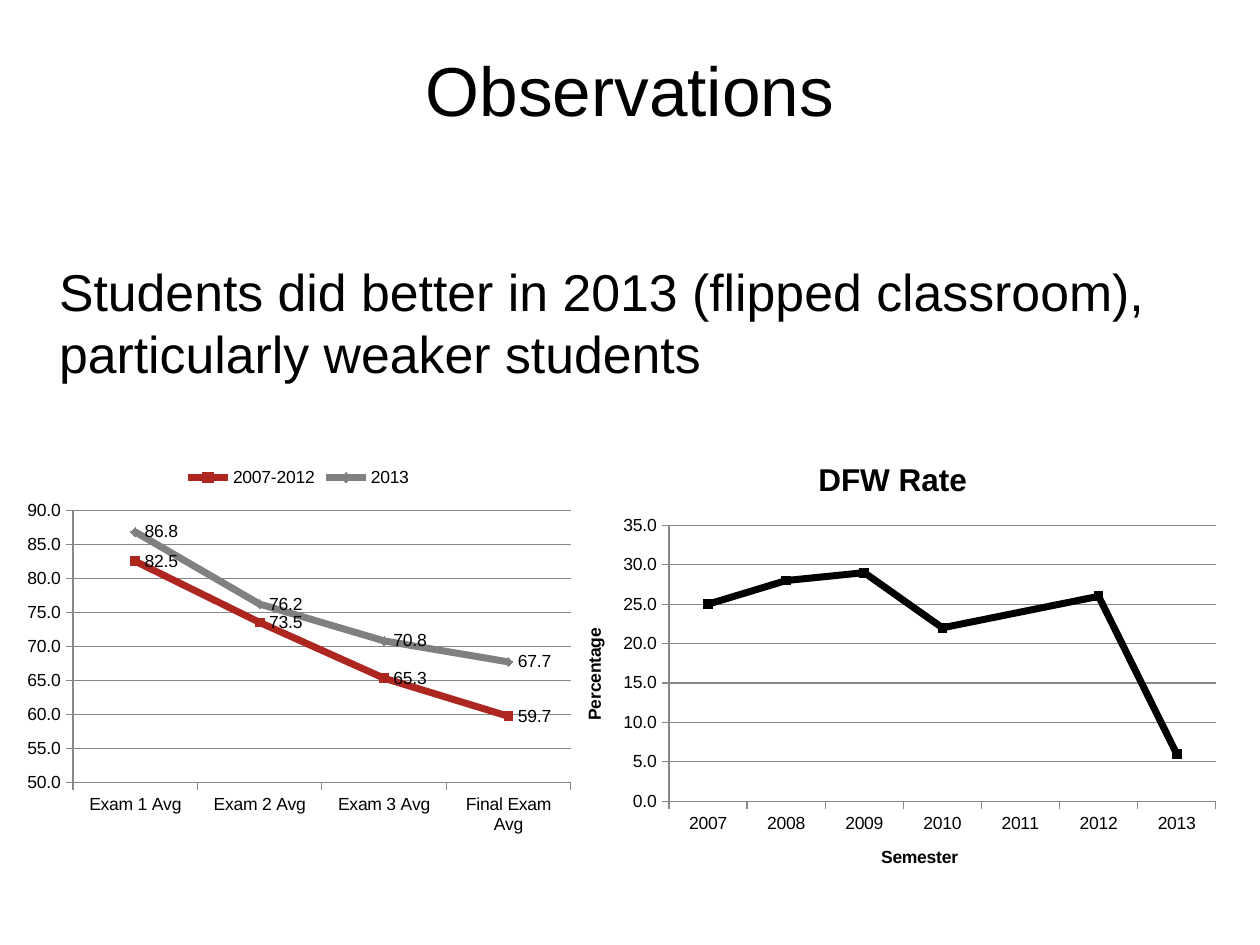
from dataclasses import dataclass

from lxml import etree
from pptx import Presentation
from pptx.chart.data import CategoryChartData
from pptx.dml.color import RGBColor
from pptx.enum.chart import (XL_CHART_TYPE, XL_LABEL_POSITION,
                             XL_LEGEND_POSITION, XL_MARKER_STYLE, XL_TICK_MARK)
from pptx.enum.text import MSO_ANCHOR, PP_ALIGN
from pptx.oxml.ns import qn
from pptx.util import Inches, Pt

LINE = XL_CHART_TYPE.LINE_MARKERS
RIGHT = XL_LABEL_POSITION.RIGHT
TOP = XL_LEGEND_POSITION.TOP
SQUARE, DIAMOND = XL_MARKER_STYLE.SQUARE, XL_MARKER_STYLE.DIAMOND
OUT = XL_TICK_MARK.OUTSIDE
MIDDLE, START = MSO_ANCHOR.MIDDLE, MSO_ANCHOR.TOP
CENTER, LEFT = PP_ALIGN.CENTER, PP_ALIGN.LEFT


@dataclass(frozen=True)
class Theme:
    face: str = "Arial"
    ink: RGBColor = RGBColor(0, 0, 0)
    red: RGBColor = RGBColor(0xAD, 0x26, 0x20)
    gray: RGBColor = RGBColor(0x80, 0x80, 0x80)
    rule: RGBColor = RGBColor(0x87, 0x87, 0x87)
    title: float = 39.6
    body: float = 29.6
    head: float = 18
    label: float = 10


THEME = Theme()


def style(font, size, bold=False):
    font.name, font.size, font.bold = THEME.face, Pt(size), bold
    font.color.rgb = THEME.ink


def add_text(slide, box, text, size, align=LEFT, anchor=START):
    frame = slide.shapes.add_textbox(*map(Inches, box)).text_frame
    frame.word_wrap = True
    frame.vertical_anchor = anchor
    para = frame.paragraphs[0]
    para.text, para.alignment = text, align
    style(para.font, size)


def set_title(owner, text, size):
    """Give a chart or an axis a bold title."""
    frame = (owner.chart_title if hasattr(owner, "chart_title")
             else owner.axis_title).text_frame
    frame.text = text
    style(frame.paragraphs[0].font, size, True)


def set_plot(chart, box, area):
    """Fix the inner plot area, given in inches within the chart's box."""
    plot = chart._chartSpace.chart.plotArea
    for old in plot.findall(qn("c:layout")):
        plot.remove(old)
    layout = etree.Element(qn("c:layout"))
    manual = etree.SubElement(layout, qn("c:manualLayout"))
    shares = [part / whole for part, whole in zip(area, box[2:] * 2)]
    parts = [("layoutTarget", "inner"), ("xMode", "edge"), ("yMode", "edge"),
             *zip("xywh", shares)]
    for name, value in parts:
        etree.SubElement(manual, qn(f"c:{name}")).set("val", str(value))
    plot.insert(0, layout)


def add_lines(slide, box, cats, rows, scale, area):
    """Add a line chart; rows hold name, values, colour and marker."""
    data = CategoryChartData(number_format="0.0")
    data.categories = cats
    for name, values, _, _ in rows:
        data.add_series(name, values)
    chart = slide.shapes.add_chart(LINE, *map(Inches, box), data).chart
    style(chart.font, THEME.label)
    chart.has_title = chart.has_legend = False
    set_plot(chart, box, area)

    for series, (_, _, color, mark) in zip(chart.plots[0].series, rows):
        series.smooth = False
        series.format.line.width = Pt(4)
        series.format.line.color.rgb = color
        series.marker.style, series.marker.size = mark, 5
        look = series.marker.format
        look.fill.solid()
        look.fill.fore_color.rgb = look.line.color.rgb = color

    axis = chart.value_axis
    axis.minimum_scale, axis.maximum_scale, axis.major_unit = scale
    axis.tick_labels.number_format = "0.0"
    axis.tick_labels.number_format_is_linked = False
    axis.has_major_gridlines = True
    for line in (axis.major_gridlines.format.line, axis.format.line,
                 chart.category_axis.format.line):
        line.color.rgb, line.width = THEME.rule, Pt(0.75)
    for each in (axis, chart.category_axis):
        each.major_tick_mark = OUT
    return chart


def add_exams(slide, box):
    cats = ["Exam 1 Avg", "Exam 2 Avg", "Exam 3 Avg", "Final Exam Avg"]
    rows = [("2007-2012", (82.5, 73.5, 65.3, 59.7), THEME.red, SQUARE),
            ("2013", (86.8, 76.2, 70.8, 67.7), THEME.gray, DIAMOND)]
    chart = add_lines(slide, box, cats, rows, (50, 90, 5),
                      (0.46, 0.45, 3.95, 2.16))
    chart.has_legend = True
    chart.legend.position = TOP
    chart.legend.include_in_layout = False
    style(chart.legend.font, THEME.label)
    for series in chart.plots[0].series:
        labels = series.data_labels
        labels.show_value, labels.position = True, RIGHT
        labels.number_format, labels.number_format_is_linked = "0.0", False
        style(labels.font, THEME.label)


def add_rate(slide, box):
    cats = [str(year) for year in range(2007, 2014)]
    rows = [("Series 1", (25, 28, 29, 22, None, 26, 6), THEME.ink, SQUARE)]
    chart = add_lines(slide, box, cats, rows, (0, 35, 5),
                      (0.89, 0.7, 4.34, 2.19))
    set_title(chart, "DFW Rate", THEME.head)
    set_title(chart.category_axis, "Semester", THEME.label)
    set_title(chart.value_axis, "Percentage", THEME.label)
    root = chart._chartSpace.chart
    root.find(qn("c:dispBlanksAs")).set("val", "span")


def main():
    deck = Presentation()
    deck.slide_width, deck.slide_height = Inches(10), Inches(7.5)
    slide = deck.slides.add_slide(deck.slide_layouts[6])
    add_text(slide, (0.5, 0.3, 9, 0.81), "Observations", THEME.title,
             CENTER, MIDDLE)
    add_text(slide, (0.37, 2.01, 9.38, 0.97),
             "Students did better in 2013 (flipped classroom), "
             "particularly weaker students", THEME.body)
    add_exams(slide, (0.12, 3.6, 4.5, 3.08))
    add_rate(slide, (4.42, 3.47, 5.33, 3.63))
    deck.save("out.pptx")


if __name__ == "__main__":
    main()
